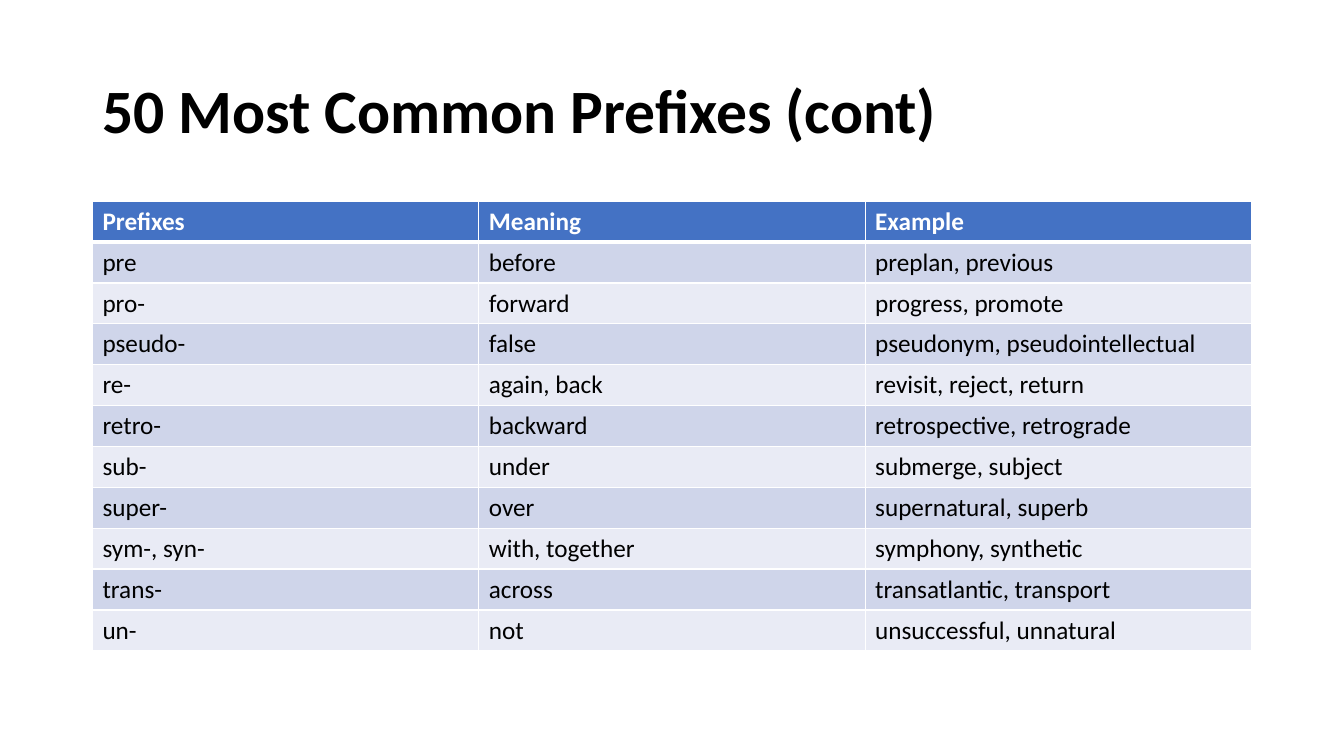
from pptx import Presentation
from pptx.dml.color import RGBColor
from pptx.enum.text import MSO_ANCHOR as Anchor
from pptx.oxml.ns import qn
from pptx.util import Cm, Pt
from lxml.etree import SubElement

WHITE = RGBColor(0xFF, 0xFF, 0xFF)
BLACK = RGBColor(0x00, 0x00, 0x00)
HEADER_BLUE = RGBColor(0x44, 0x72, 0xC4)
BAND_DARK = RGBColor(0xCF, 0xD5, 0xEA)
BAND_LIGHT = RGBColor(0xE9, 0xEB, 0xF5)
FONT = "Calibri"

TITLE = "50 Most Common Prefixes (cont)"
PREFIXES = [
    ("Prefixes", "Meaning", "Example"),
    ("pre", "before", "preplan, previous"),
    ("pro-", "forward", "progress, promote"),
    ("pseudo-", "false", "pseudonym, pseudointellectual"),
    ("re-", "again, back", "revisit, reject, return"),
    ("retro-", "backward", "retrospective, retrograde"),
    ("sub-", "under", "submerge, subject"),
    ("super-", "over", "supernatural, superb"),
    ("sym-, syn-", "with, together", "symphony, synthetic"),
    ("trans-", "across", "transatlantic, transport"),
    ("un-", "not", "unsuccessful, unnatural"),
]


def add_span(para, text, size, color, bold):
    """Add one formatted run to a paragraph."""
    span = para.add_run()
    span.text = text
    span.font.name = FONT
    span.font.size = Pt(size)
    span.font.bold = bold
    span.font.color.rgb = color


def add_title(page, left, top, width, height):
    """Place the bold heading, centred vertically in its box."""
    frame = page.shapes.add_textbox(left, top, width, height).text_frame
    frame.word_wrap = True
    frame.vertical_anchor = Anchor.MIDDLE
    para = frame.paragraphs[0]
    para.line_spacing = 0.9
    add_span(para, TITLE, 44, BLACK, True)


def set_borders(cell, top, bottom):
    """Draw white cell borders with the given top and bottom widths in points."""
    properties = cell._tc.get_or_add_tcPr()
    for side, width in (("L", 1), ("R", 1), ("T", top), ("B", bottom)):
        line = SubElement(properties, qn(f"a:ln{side}"), w=str(Pt(width)))
        fill = SubElement(line, qn("a:solidFill"))
        SubElement(fill, qn("a:srgbClr"), val=str(WHITE))


def add_prefix_table(page, left, top, width, height):
    """Fill the box with a header row and banded rows of prefixes."""
    row_count, column_count = len(PREFIXES), len(PREFIXES[0])
    table = page.shapes.add_table(
        row_count, column_count, left, top, width, height).table
    for row, texts in enumerate(PREFIXES):
        header = row == 0
        band = BAND_DARK if row % 2 else BAND_LIGHT
        for column, text in enumerate(texts):
            cell = table.cell(row, column)
            set_borders(cell, 3 if row == 1 else 1, 3 if header else 1)
            cell.fill.solid()
            cell.fill.fore_color.rgb = HEADER_BLUE if header else band
            add_span(cell.text_frame.paragraphs[0], text, 18,
                     WHITE if header else BLACK, header)


def main():
    """Build the slide and save the deck."""
    deck = Presentation()
    deck.slide_width, deck.slide_height = Cm(33.87), Cm(19.05)
    page = deck.slides.add_slide(deck.slide_layouts[6])
    margin = Cm(2.33)
    width = deck.slide_width - 2 * margin
    add_title(page, margin, Cm(1.01), width, Cm(3.68))
    add_prefix_table(page, margin, Cm(5.07), width, Cm(11.33))
    deck.save("out.pptx")


if __name__ == "__main__":
    main()
